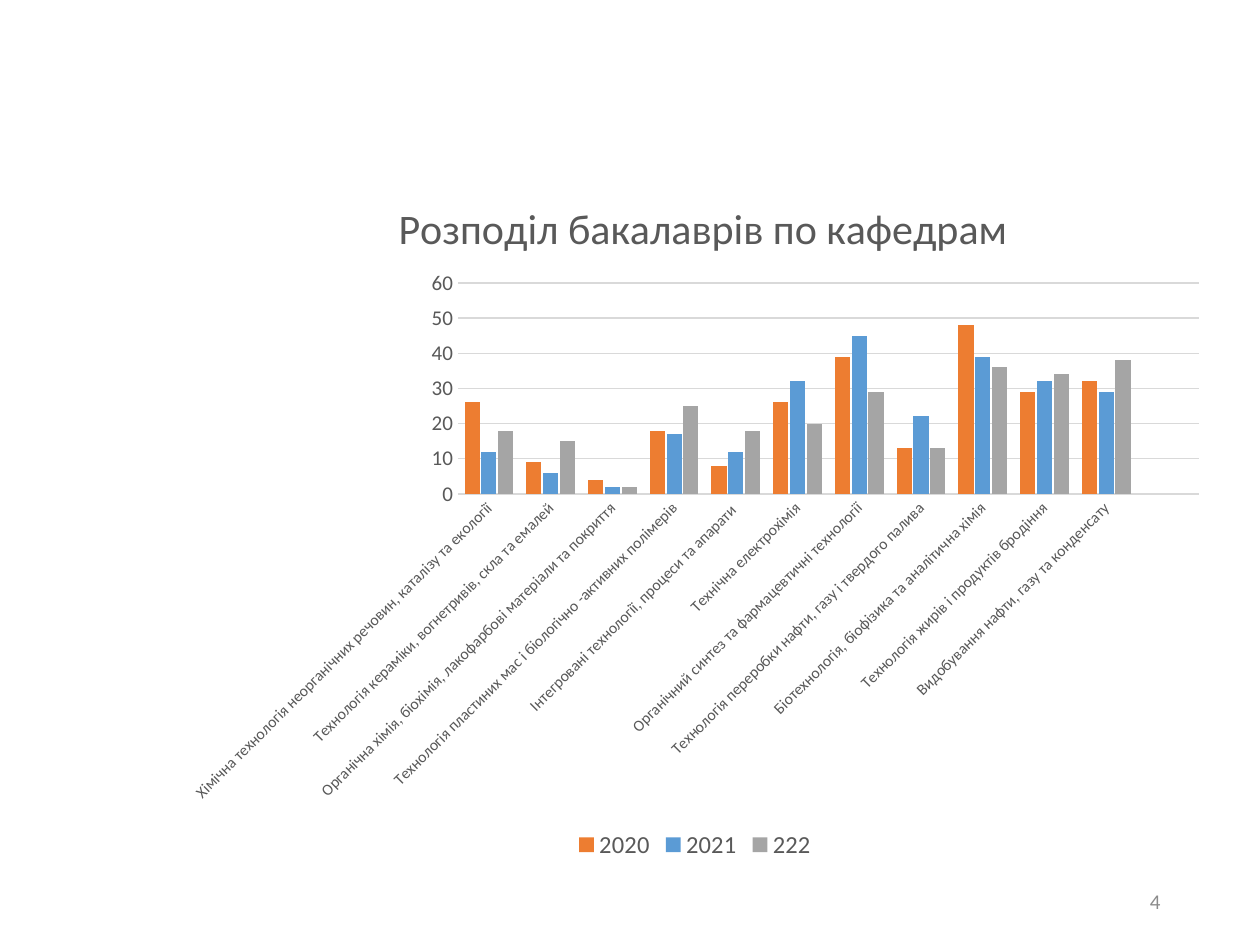
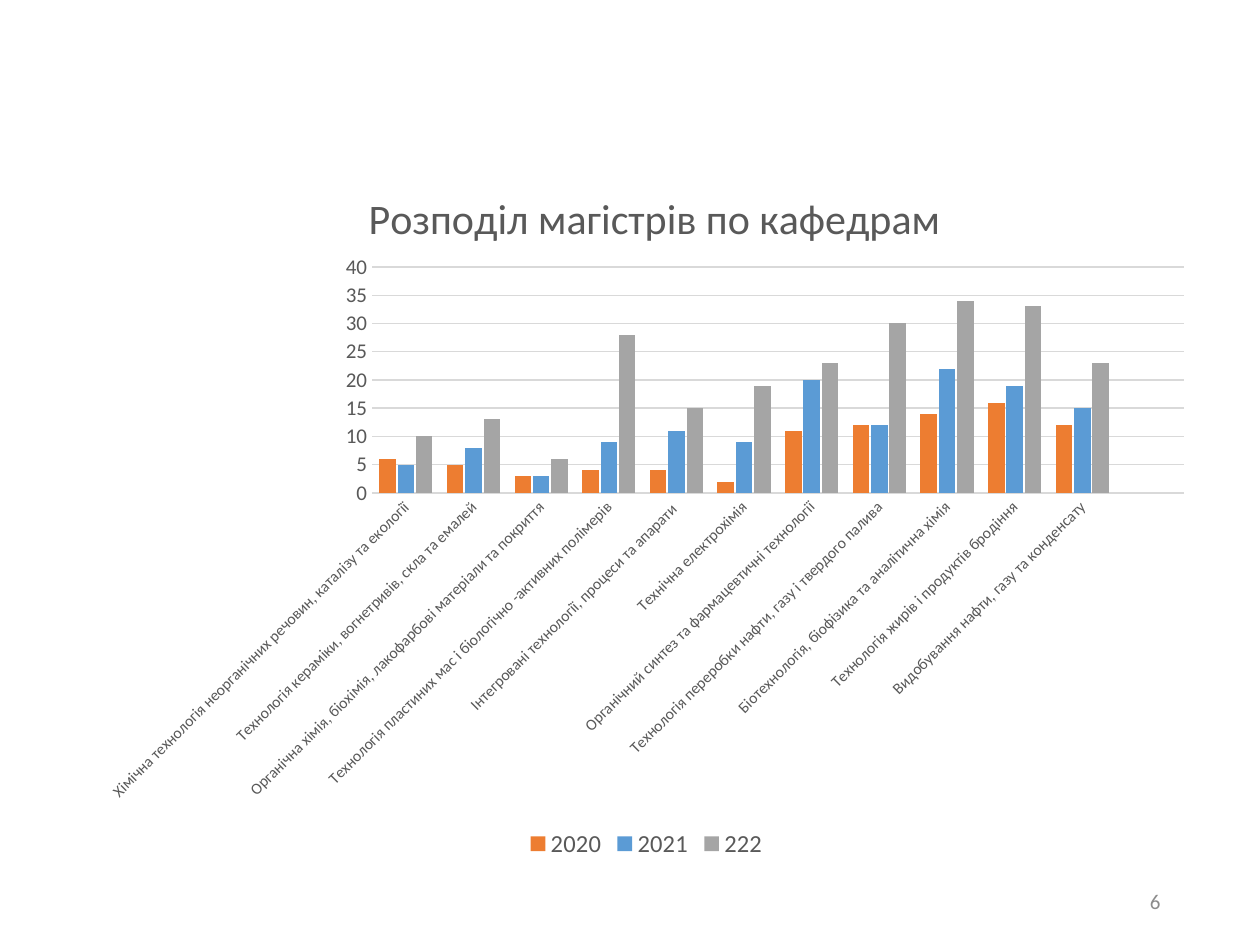
from dataclasses import dataclass

from lxml import etree
from pptx import Presentation
from pptx import util as u
from pptx.chart.data import CategoryChartData
from pptx.dml.color import RGBColor
from pptx.enum import chart as charts, text
from pptx.oxml.ns import qn

PX = u.Inches(1) / 126
FONT = "Calibri"
GREY_TEXT = RGBColor(0x59, 0x59, 0x59)
GREY_NUMBER = RGBColor(0x8C, 0x8C, 0x8C)
GREY_LINE = RGBColor(0xD9, 0xD9, 0xD9)
YEAR_COLOURS = {
    "2020": RGBColor(0xED, 0x7D, 0x31),
    "2021": RGBColor(0x5B, 0x9B, 0xD5),
    "222": RGBColor(0xA5, 0xA5, 0xA5),
}
DEPARTMENTS = [
    "Хімічна технологія неорганічних речовин, каталізу та екології",
    "Технологія кераміки, вогнетривів, скла та емалей",
    "Органічна хімія, біохімія, лакофарбові матеріали та покриття",
    "Технологія пластиних мас і біологічно -активних полімерів",
    "Інтегровані технології, процеси та апарати ",
    "Технічна електрохімія",
    "Органічний синтез та фармацевтичні технології",
    "Технологія переробки нафти, газу і твердого палива",
    "Біотехнологія, біофізика та аналітична хімія",
    "Технологія жирів і продуктів бродіння",
    "Видобування нафти, газу та конденсату",
]


@dataclass(frozen=True)
class Box:
    left: int
    top: int
    width: int
    height: int

    def emu(self) -> list[u.Emu]:
        return [u.Emu(round(side * PX))
                for side in (self.left, self.top, self.width, self.height)]


@dataclass(frozen=True)
class Distribution:
    number: str
    title: str
    frame: Box
    plot: Box
    title_left: int
    title_top: int
    axis_max: int
    axis_step: int
    counts: tuple[list[int], ...]


NUMBER_BOX = Box(890, 876, 283, 50)
DISTRIBUTIONS = [
    Distribution(
        "4", "Розподіл бакалаврів по кафедрам",
        Box(171, 159, 1048, 706), Box(458, 283, 741, 211), 391, 193, 60, 10,
        ([26, 9, 4, 18, 8, 26, 39, 13, 48, 29, 32],
         [12, 6, 2, 17, 12, 32, 45, 22, 39, 32, 29],
         [18, 15, 2, 25, 18, 20, 29, 13, 36, 34, 38])),
    Distribution(
        "6", "Розподіл магістрів по кафедрам",
        Box(87, 156, 1119, 708), Box(372, 267, 812, 226), 361, 183, 40, 5,
        ([6, 5, 3, 4, 4, 2, 11, 12, 14, 16, 12],
         [5, 8, 3, 9, 11, 9, 20, 12, 22, 19, 15],
         [10, 13, 6, 28, 15, 19, 23, 30, 34, 33, 23])),
]


def style_font(font, size: int, colour: RGBColor = GREY_TEXT) -> None:
    font.name = FONT
    font.size = u.Pt(size)
    font.bold = False
    font.color.rgb = colour


def style_line(line) -> None:
    line.color.rgb = GREY_LINE
    line.width = u.Pt(0.75)


def set_layout(parent, index: int, settings: dict[str, object]) -> None:
    """Replace the manual layout of a chart part, as fractions of the chart."""
    for old in parent.findall(qn("c:layout")):
        parent.remove(old)
    layout = etree.Element(qn("c:layout"))
    manual = etree.SubElement(layout, qn("c:manualLayout"))
    for tag, value in settings.items():
        etree.SubElement(manual, qn(f"c:{tag}")).set("val", str(value))
    parent.insert(index, layout)


def place_parts(chart, item: Distribution) -> None:
    """Put the title and the plot area where the slide needs them."""
    frame, plot = item.frame, item.plot

    def corner(left: int, top: int) -> dict[str, object]:
        return {"xMode": "edge", "yMode": "edge",
                "x": (left - frame.left) / frame.width,
                "y": (top - frame.top) / frame.height}

    set_layout(chart.chart_title._element, 1,
               corner(item.title_left, item.title_top))
    plot_area = chart._chartSpace.find(f".//{qn('c:plotArea')}")
    set_layout(plot_area, 0,
               {"layoutTarget": "inner", **corner(plot.left, plot.top),
                "w": plot.width / frame.width,
                "h": plot.height / frame.height})


def style_axes(chart, item: Distribution) -> None:
    departments, counts = chart.category_axis, chart.value_axis
    for axis, size in ((departments, 9), (counts, 12)):
        axis.major_tick_mark = axis.minor_tick_mark = charts.XL_TICK_MARK.NONE
        style_font(axis.tick_labels.font, size)
    departments.has_major_gridlines = False
    style_line(departments.format.line)
    label_body = departments._element.find(qn("c:txPr")).find(qn("a:bodyPr"))
    label_body.set("rot", "-2700000")
    label_body.set("vert", "horz")

    counts.minimum_scale, counts.maximum_scale = 0, item.axis_max
    counts.major_unit = item.axis_step
    counts.format.line.fill.background()
    style_line(counts.major_gridlines.format.line)


def add_distribution_chart(slide, item: Distribution) -> None:
    chart_data = CategoryChartData(number_format="General")
    chart_data.categories = DEPARTMENTS + [""]
    for year, counts in zip(YEAR_COLOURS, item.counts):
        chart_data.add_series(year, counts + [None])
    chart = slide.shapes.add_chart(
        charts.XL_CHART_TYPE.COLUMN_CLUSTERED, *item.frame.emu(),
        chart_data).chart
    style_font(chart.font, 10, RGBColor(0, 0, 0))

    chart.has_title = True
    heading = chart.chart_title.text_frame
    heading.text = item.title
    style_font(heading.paragraphs[0].runs[0].font, 24)

    chart.has_legend = True
    chart.legend.position = charts.XL_LEGEND_POSITION.BOTTOM
    chart.legend.include_in_layout = False
    style_font(chart.legend.font, 14)

    columns = chart.plots[0]
    columns.vary_by_categories = False
    columns.gap_width, columns.overlap = 87, -11
    for series in columns.series:
        series.format.fill.solid()
        series.format.fill.fore_color.rgb = YEAR_COLOURS[series.name]
    style_axes(chart, item)
    place_parts(chart, item)


def add_slide_number(slide, number: str) -> None:
    frame = slide.shapes.add_textbox(*NUMBER_BOX.emu()).text_frame
    frame.word_wrap = True
    frame.vertical_anchor = text.MSO_ANCHOR.MIDDLE
    frame.text = number
    paragraph = frame.paragraphs[0]
    paragraph.alignment = text.PP_ALIGN.RIGHT
    style_font(paragraph.runs[0].font, 12, GREY_NUMBER)


def main() -> None:
    deck = Presentation()
    deck.slide_width, deck.slide_height = u.Inches(10), u.Inches(7.5)
    for item in DISTRIBUTIONS:
        slide = deck.slides.add_slide(deck.slide_layouts[6])
        add_slide_number(slide, item.number)
        add_distribution_chart(slide, item)
    deck.save("out.pptx")


if __name__ == "__main__":
    main()
